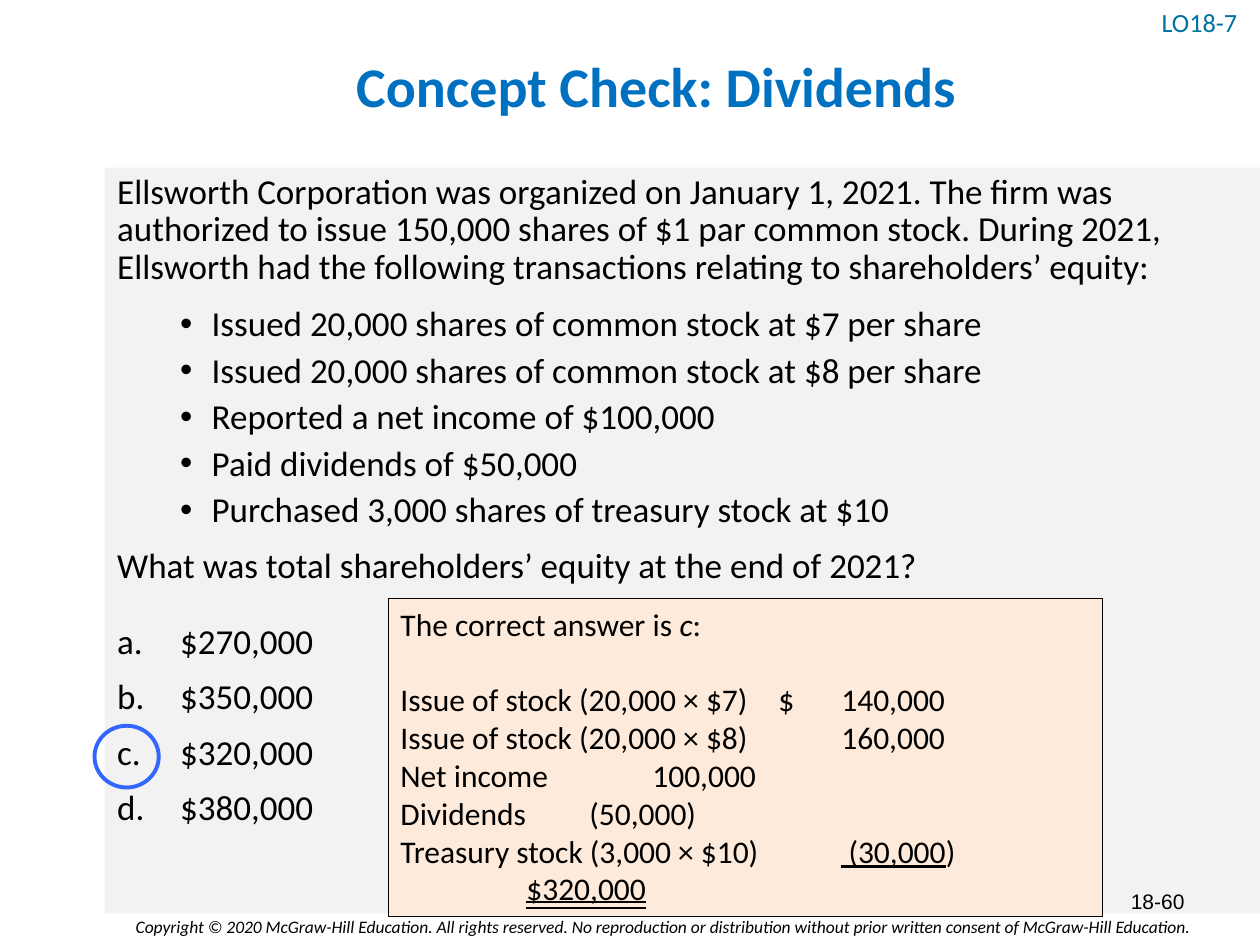
from lxml.etree import SubElement
from pptx import Presentation
from pptx.dml.color import RGBColor
from pptx.enum.shapes import MSO_SHAPE
from pptx.enum.text import MSO_ANCHOR, MSO_AUTO_SIZE, MSO_UNDERLINE, PP_ALIGN
from pptx.oxml.ns import qn
from pptx.util import Inches, Pt

BLACK = RGBColor(0x00, 0x00, 0x00)
BLUE = RGBColor(0x00, 0x70, 0xC0)
TEAL = RGBColor(0x00, 0x72, 0xA2)
RING = RGBColor(0x33, 0x66, 0xFF)
GRAY = RGBColor(0xF2, 0xF2, 0xF2)
PEACH = RGBColor(0xFD, 0xEA, 0xDA)

# Content
TITLE = "Concept Check: Dividends"
GOAL = "LO18-7"
PAGE = "18-60"
LEGAL = ("Copyright © 2020 McGraw-Hill Education. All rights reserved. "
         "No reproduction or distribution without prior written consent "
         "of McGraw-Hill Education.")
INTRO = ("Ellsworth Corporation was organized on January 1, 2021. The firm was "
         "authorized to issue 150,000 shares of $1 par common stock. During 2021, "
         "Ellsworth had the following transactions relating to shareholders’ equity:")
EVENTS = [
    "Issued 20,000 shares of common stock at $7 per share",
    "Issued 20,000 shares of common stock at $8 per share",
    "Reported a net income of $100,000",
    "Paid dividends of $50,000",
    "Purchased 3,000 shares of treasury stock at $10",
]
QUERY = "What was total shareholders’ equity at the end of 2021?"
PICKS = ["$270,000", "$350,000", "$320,000", "$380,000"]
# Label, currency sign, amount
ROWS = [
    ("Issue of stock (20,000 × $7)", "$", "140,000"),
    ("Issue of stock (20,000 × $8)", "", "160,000"),
    ("Net income", "", "100,000"),
    ("Dividends", "", "(50,000)"),
]
LAST = "Treasury stock (3,000 × $10)"
ONE, TWO = MSO_UNDERLINE.SINGLE_LINE, MSO_UNDERLINE.DOUBLE_LINE
STOPS = [(4, "l"), (5.06, "r")]


def write(frame, text, size=20, color=BLACK, face="Calibri", bold=False,
          align=PP_ALIGN.LEFT, line=1.0, before=0, after=0, level=0,
          indent=(0, 0), mark=None, tabs=(), italic=False):
    """Add a paragraph; text is a string or a list of (string, format) runs."""
    para = frame.paragraphs[0]
    if para.runs:
        para = frame.add_paragraph()
    props = para._p.get_or_add_pPr()
    left, hang = indent
    props.set("marL", str(Inches(left)))
    props.set("indent", str(Inches(hang)))
    if mark is None:
        SubElement(props, qn("a:buNone"))
    elif mark == "•":
        SubElement(props, qn("a:buFont"), typeface="Arial")
        SubElement(props, qn("a:buChar"), char=mark)
    else:
        SubElement(props, qn("a:buFont"), typeface="+mj-lt")
        SubElement(props, qn("a:buAutoNum"), type=mark)
    if tabs:
        stops = SubElement(props, qn("a:tabLst"))
        for spot, kind in tabs:
            SubElement(stops, qn("a:tab"), pos=str(Inches(spot)), algn=kind)
    para.level, para.alignment, para.line_spacing = level, align, line
    para.space_before, para.space_after = Pt(before), Pt(after)
    runs = [(text, {})] if isinstance(text, str) else text
    for words, style in runs:
        run = para.add_run()
        run.text = words
        font = run.font
        font.name, font.size, font.bold = face, Pt(size), bold
        font.color.rgb = color
        font.italic = style.get("italic", italic)
        if "under" in style:
            font.underline = style["under"]


def place(shape, box):
    shape.left, shape.top, shape.width, shape.height = map(Inches, box)


def setup(shape, anchor=MSO_ANCHOR.TOP):
    frame = shape.text_frame
    frame.word_wrap = True
    frame.auto_size = MSO_AUTO_SIZE.NONE
    frame.vertical_anchor = anchor
    return frame


def label(slide, box, text, anchor=MSO_ANCHOR.TOP, **style):
    shape = slide.shapes.add_textbox(*map(Inches, box))
    write(setup(shape, anchor), text, **style)


def main():
    deck = Presentation()
    deck.slide_width, deck.slide_height = Inches(10), Inches(7.5)
    slide = deck.slides.add_slide(deck.slide_layouts[1])

    # Title
    title = slide.shapes.title
    place(title, (0.83, 0.19, 8.76, 1.03))
    write(setup(title, MSO_ANCHOR.MIDDLE), TITLE, size=32, color=BLUE,
          bold=True, align=PP_ALIGN.CENTER, line=0.9)

    # Question and choices
    body = slide.placeholders[1]
    place(body, (0.83, 1.33, 9.17, 5.92))
    body.fill.solid()
    body.fill.fore_color.rgb = GRAY
    frame = setup(body)
    write(frame, INTRO, line=0.9, after=6)
    for text in EVENTS:
        write(frame, text, line=0.9, before=5, level=1,
              indent=(0.75, -0.25), mark="•")
    write(frame, QUERY, line=0.9, before=10, after=12)
    for text in PICKS:
        write(frame, text, line=0.9, before=10, indent=(0.5, -0.5),
              mark="alphaLcPeriod")

    # Footer
    label(slide, (0.45, 7.22, 9.09, 0.27), LEGAL, size=10, italic=True,
          align=PP_ALIGN.RIGHT)

    # Ring around the right choice
    ring = slide.shapes.add_shape(
        MSO_SHAPE.OVAL, *map(Inches, (0.75, 5.76, 0.51, 0.49)))
    ring.shadow.inherit = False
    ring.fill.background()
    ring.line.color.rgb, ring.line.width = RING, Pt(2.25)

    # Worked answer
    card = slide.shapes.add_shape(
        MSO_SHAPE.RECTANGLE, *map(Inches, (3.08, 4.75, 5.67, 2.52)))
    card.shadow.inherit = False
    card.fill.solid()
    card.fill.fore_color.rgb = PEACH
    card.line.color.rgb, card.line.width = BLACK, Pt(0.5)
    frame = setup(card)
    write(frame, [("The correct answer is ", {}), ("c", {"italic": True}),
                  (":", {})], size=18, after=21.6)
    lines = [[("\t".join(row), {})] for row in ROWS]
    lines.append([(LAST + "\t\t", {}), (" (30,000", {"under": ONE}), (")", {})])
    lines.append([("\t\t", {}), ("$320,000", {"under": TWO})])
    for runs in lines:
        write(frame, runs, size=18, tabs=STOPS)

    # Goal tag and page number
    label(slide, (9.12, 0, 0.98, 0.35), GOAL, size=15, color=TEAL)
    label(slide, (7.17, 6.95, 2.33, 0.4), PAGE, anchor=MSO_ANCHOR.MIDDLE,
          size=12, face="Arial", align=PP_ALIGN.RIGHT)

    deck.save("out.pptx")


if __name__ == "__main__":
    main()
